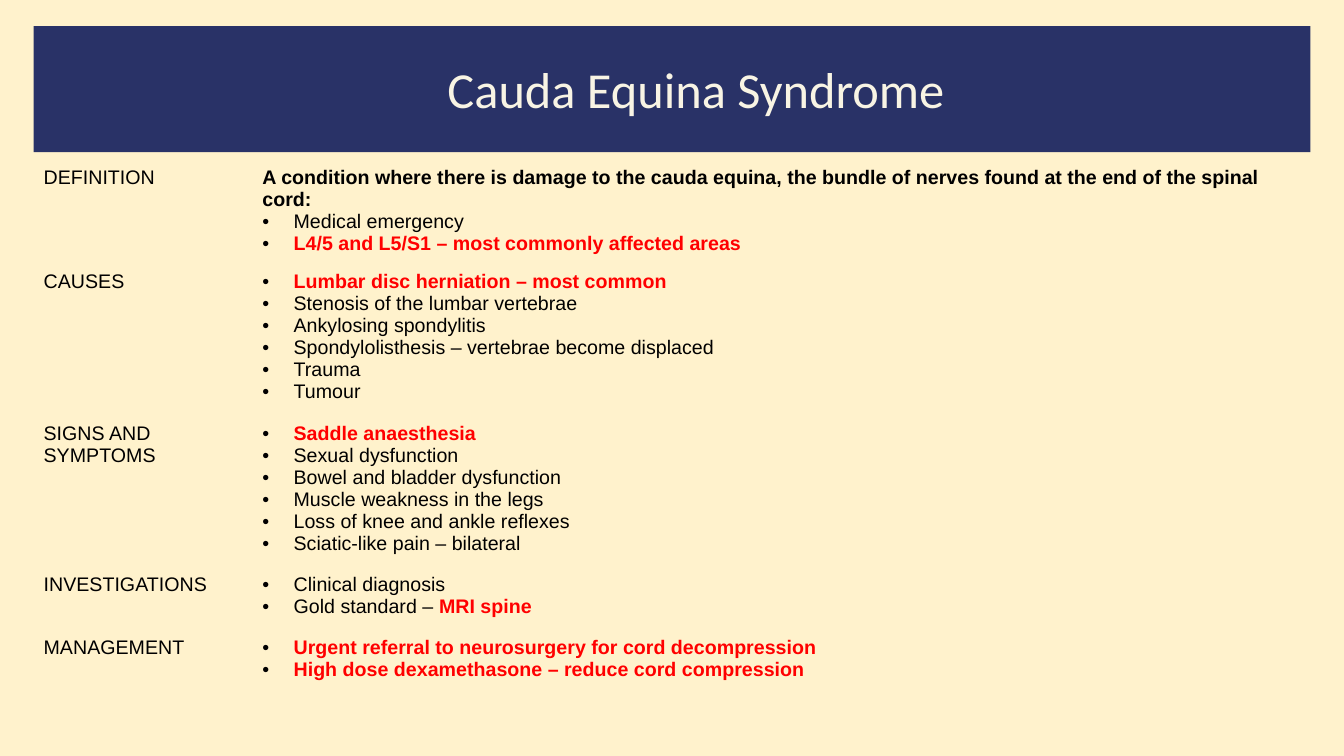
from pptx import Presentation
from pptx.dml.color import RGBColor as Rgb
from pptx.enum.shapes import MSO_SHAPE as Shape
from pptx.util import Inches, Pt
from lxml.etree import SubElement as Sub
from pptx.oxml.ns import qn

TITLE = "Cauda Equina Syndrome"
ROWS = [
    ("DEFINITION", 1.03,
     "A condition where there is damage to the cauda equina, the bundle of nerves found at the end of the spinal cord:",
     ["Medical emergency", "*L4/5 and L5/S1 – most commonly affected areas"]),
    ("CAUSES", 1.51, "",
     ["*Lumbar disc herniation – most common", "Stenosis of the lumbar vertebrae",
      "Ankylosing spondylitis", "Spondylolisthesis – vertebrae become displaced",
      "Trauma", "Tumour"]),
    ("SIGNS AND SYMPTOMS", 1.5, "",
     ["*Saddle anaesthesia", "Sexual dysfunction", "Bowel and bladder dysfunction",
      "Muscle weakness in the legs", "Loss of knee and ankle reflexes",
      "Sciatic-like pain – bilateral"]),
    ("INVESTIGATIONS", 0.62, "", ["Clinical diagnosis", "Gold standard – *MRI spine"]),
    ("MANAGEMENT", 0.62, "",
     ["*Urgent referral to neurosurgery for cord decompression",
      "*High dose dexamethasone – reduce cord compression"]),
]
COLS = [2.17, 10.47]
WIDE, HIGH = 13.33, 7.5
EDGE = WIDE * 0.025
PLAIN = "{2D5ABB26-0587-4C30-8999-92F81FD0307C}"
INDENT = Inches(0.31)
BODY = {"name": "Arial", "size": Pt(14), "bold": False}
HEAD = {"name": "Calibri", "size": Pt(36), "bold": False}


def paint(fill, tint):
    fill.solid()
    fill.fore_color.rgb = Rgb.from_string(tint)


def write(para, text, look, tint="000000"):
    run = para.add_run()
    run.text = text
    for key, value in look.items():
        setattr(run.font, key, value)
    run.font.color.rgb = Rgb.from_string(tint)


def bullet(para):
    props = para._p.get_or_add_pPr()
    props.set("marL", str(INDENT))
    props.set("indent", str(-INDENT))
    Sub(Sub(props, qn("a:buClr")), qn("a:srgbClr"), val="000000")
    Sub(props, qn("a:buFont"), typeface="Arial")
    Sub(props, qn("a:buChar"), char="•")


def detail(frame, lead, items):
    para = frame.paragraphs[0]
    if lead:
        write(para, lead, BODY | {"bold": True})
    for i, item in enumerate(items):
        if i or lead:
            para = frame.add_paragraph()
        bullet(para)
        calm, _, key = item.partition("*")
        if calm:
            write(para, calm, BODY)
        if key:
            write(para, key, BODY | {"bold": True}, "FF0000")


def main():
    deck = Presentation()
    deck.slide_width, deck.slide_height = Inches(WIDE), Inches(HIGH)
    slide = deck.slides.add_slide(deck.slide_layouts[6])
    paint(slide.background.fill, "FFF2CC")

    band = slide.shapes.add_shape(
        Shape.RECTANGLE, *map(Inches, (EDGE, 0.26, WIDE - 2 * EDGE, 1.25)))
    band.shadow.inherit = False
    paint(band.fill, "293267")
    band.line.fill.background()

    box = slide.shapes.add_textbox(*map(Inches, (4.34, 0.53, 6.53, 0.71)))
    box.text_frame.word_wrap = True
    write(box.text_frame.paragraphs[0], TITLE, HEAD, "F8F4E4")

    tall = sum(row[1] for row in ROWS)
    frame = slide.shapes.add_table(
        len(ROWS), len(COLS), *map(Inches, (EDGE, 1.6, sum(COLS), tall)))
    table = frame.table
    table.first_row = table.horz_banding = False
    table._tbl.tblPr.find(qn("a:tableStyleId")).text = PLAIN
    for col, width in zip(table.columns, COLS):
        col.width = Inches(width)
    for row, (label, height, lead, items) in zip(table.rows, ROWS):
        row.height = Inches(height)
        left, right = row.cells
        for cell in (left, right):
            cell.fill.background()
        write(left.text_frame.paragraphs[0], label, BODY)
        detail(right.text_frame, lead, items)

    deck.save("out.pptx")


if __name__ == "__main__":
    main()
